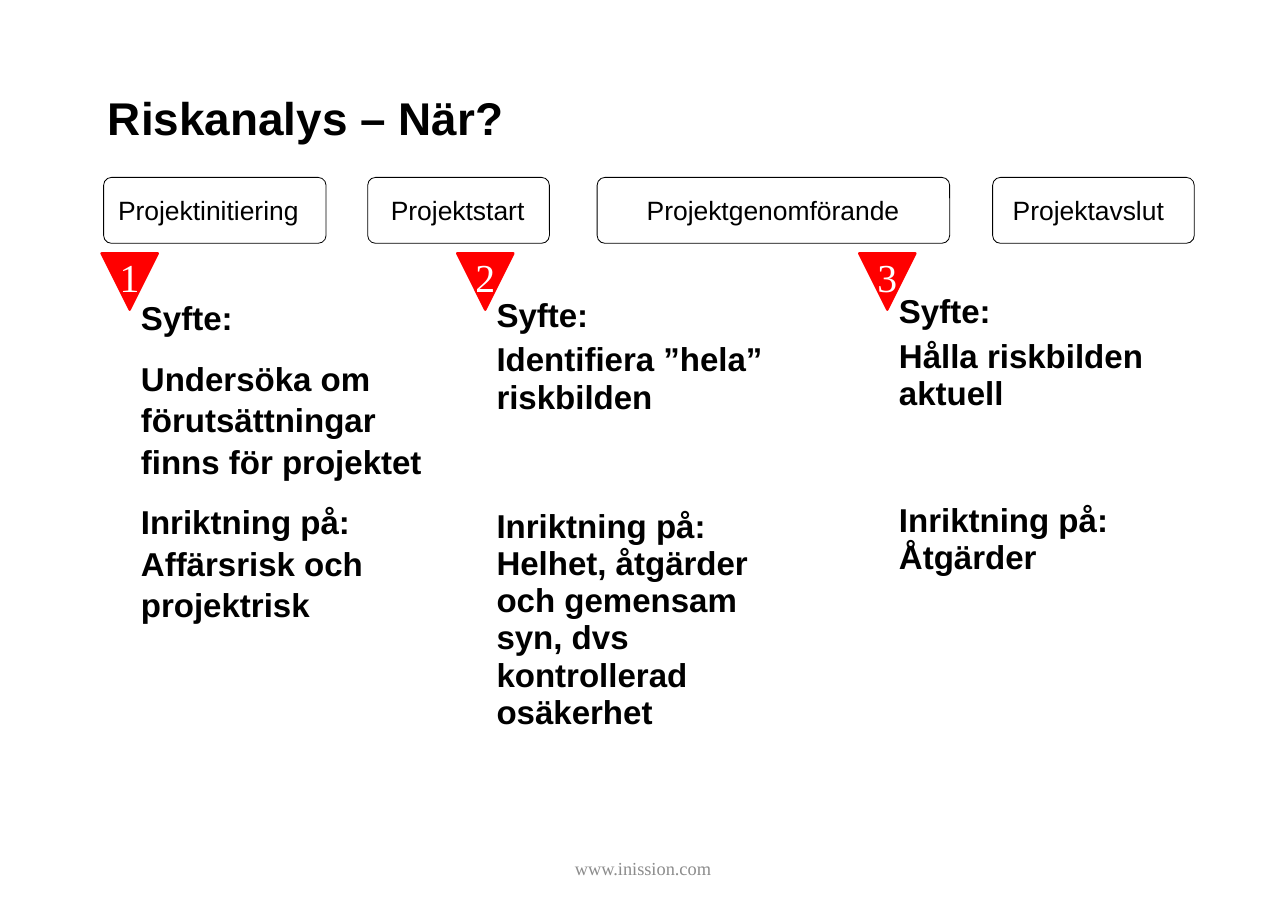
from pptx import Presentation
from pptx.dml.color import RGBColor
from pptx.enum.shapes import MSO_SHAPE
from pptx.enum.text import MSO_ANCHOR, PP_ALIGN
from pptx.util import Cm, Pt

ROUNDED, TRIANGLE = MSO_SHAPE.ROUNDED_RECTANGLE, MSO_SHAPE.ISOSCELES_TRIANGLE
TOP, MIDDLE = MSO_ANCHOR.TOP, MSO_ANCHOR.MIDDLE
LEFT, CENTER = PP_ALIGN.LEFT, PP_ALIGN.CENTER
BLACK, WHITE, RED, GREY = "000000", "FFFFFF", "FF0000", "8C8C8C"
SANS, SERIF = "Arial", "Times New Roman"

# Content; lengths in cm, spacing in points
TITLE = "Riskanalys – När?"
FOOTER = "www.inission.com"
PHASES = [  # label, left, width, text indent
    ("Projektinitiering", 2.39, 5.13, 0.28),
    ("Projektstart", 8.48, 4.19, 0.48),
    ("Projektgenomförande", 13.77, 8.13, 1.09),
    ("Projektavslut", 22.89, 4.65, 0.41),
]
ANALYSES = [  # marker left, text left, text top, line spacing, (space before, text)
    (2.34, 3.25, 6.83, 1.04, [
        (0, "Syfte:"),
        (12.8, "Undersöka om förutsättningar finns för projektet"),
        (12.8, "Inriktning på: Affärsrisk och projektrisk"),
    ]),
    (10.54, 11.45, 6.86, 0.94, [
        (0, "Syfte:"),
        (4.8, "Identifiera ”hela” riskbilden"),
        (59.8, "Inriktning på:\vHelhet, åtgärder och gemensam syn, "
               "dvs kontrollerad osäkerhet"),
    ]),
    (19.81, 20.73, 6.78, 0.94, [
        (0, "Syfte:"),
        (4.8, "Hålla riskbilden aktuell"),
        (58.4, "Inriktning på: Åtgärder"),
    ]),
]
PHASE_TOP, PHASE_HEIGHT = 4.09, 1.52
MARKER_TOP, MARKER_SIZE = 5.84, 1.3
COLUMN_WIDTH, COLUMN_HEIGHT = 7.1, 10.46


def color(value):
    return RGBColor.from_string(value)


def write(shape, paragraphs, size, font=SANS, ink=BLACK, bold=False, align=LEFT,
          anchor=TOP, inset=(0, 0), spacing=None, wrap=True):
    frame = shape.text_frame
    frame.word_wrap = wrap
    frame.vertical_anchor = anchor
    frame.margin_left, frame.margin_top = Cm(inset[0]), Cm(inset[1])
    frame.margin_right = frame.margin_bottom = 0
    for index, (before, text) in enumerate(paragraphs):
        paragraph = frame.add_paragraph() if index else frame.paragraphs[0]
        paragraph.text = text
        paragraph.alignment = align
        paragraph.space_before = Pt(before)
        if spacing:
            paragraph.line_spacing = spacing
        paragraph.font.name, paragraph.font.size = font, Pt(size)
        paragraph.font.bold = bold
        paragraph.font.color.rgb = color(ink)


def add_box(kind, left, top, width, height, fill, line, line_width):
    shape = slide.shapes.add_shape(kind, Cm(left), Cm(top), Cm(width), Cm(height))
    shape.shadow.inherit = False
    shape.fill.solid()
    shape.fill.fore_color.rgb = color(fill)
    shape.line.color.rgb = color(line)
    shape.line.width = Pt(line_width)
    return shape


def add_text(left, top, width, height, paragraphs, size, **style):
    box = slide.shapes.add_textbox(Cm(left), Cm(top), Cm(width), Cm(height))
    write(box, paragraphs, size, **style)


presentation = Presentation()
presentation.slide_width, presentation.slide_height = Cm(29.7), Cm(21)
slide = presentation.slides.add_slide(presentation.slide_layouts[5])

# Title
title = slide.shapes.title
title.left, title.top, title.width, title.height = Cm(2.24), Cm(0.94), Cm(25.25), Cm(3.5)
write(title, [(0, TITLE)], 30, bold=True, anchor=MIDDLE, inset=(0.25, 0))

# Project phases
for label, left, width, indent in PHASES:
    phase = add_box(ROUNDED, left, PHASE_TOP, width, PHASE_HEIGHT, WHITE, BLACK, 0.55)
    phase.adjustments[0] = 0.12
    write(phase, [(0, label)], 17.3, anchor=MIDDLE, inset=(indent, 0), wrap=False)

# Analysis columns with numbered markers
for number, (marker_left, left, top, spacing, paragraphs) in enumerate(ANALYSES, 1):
    add_text(left, top, COLUMN_WIDTH, COLUMN_HEIGHT, paragraphs, 21.6,
             bold=True, spacing=spacing)
    marker = add_box(TRIANGLE, marker_left, MARKER_TOP, MARKER_SIZE, MARKER_SIZE,
                     RED, RED, 1.5)
    marker.rotation = 180
    add_text(marker_left, MARKER_TOP, MARKER_SIZE, MARKER_SIZE, [(0, str(number))], 25.9,
             font=SERIF, ink=WHITE, align=CENTER)

# Footer
add_text(10.13, 19.46, 9.4, 1.12, [(0, FOOTER)], 12, font=SERIF, ink=GREY,
         align=CENTER, anchor=MIDDLE)

presentation.save("out.pptx")
